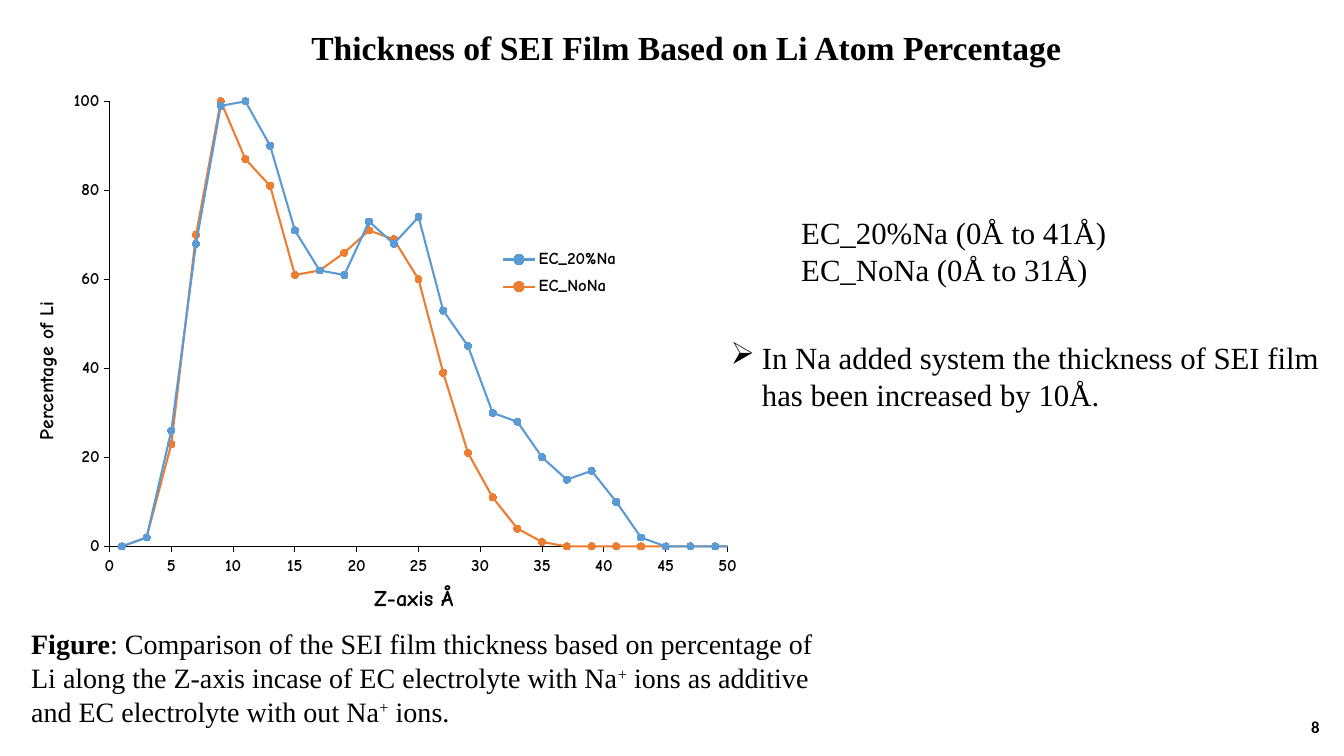
import dataclasses

import lxml.etree
import pptx
import pptx.chart.data
import pptx.dml.color
import pptx.enum.chart
import pptx.enum.text
import pptx.oxml.ns
import pptx.util

ALIGN = pptx.enum.text.PP_ALIGN
ANCHOR = pptx.enum.text.MSO_ANCHOR
AUTOSIZE = pptx.enum.text.MSO_AUTO_SIZE
CHART = pptx.enum.chart


def rgb(code):
    return pptx.dml.color.RGBColor.from_string(code)


def apply(target, values):
    for name, value in values.items():
        setattr(target, name, value)


def set_layout(parent, index, x, y, w, h, inner=False):
    """Give a chart part a manual layout, in shares of the chart."""
    qn = pptx.oxml.ns.qn
    for old in parent.findall(qn("c:layout")):
        parent.remove(old)
    layout = lxml.etree.Element(qn("c:layout"))
    parent.insert(index, layout)
    manual = lxml.etree.SubElement(layout, qn("c:manualLayout"))
    entries = {"layoutTarget": "inner"} if inner else {}
    entries.update(xMode="edge", yMode="edge", x=x, y=y, w=w, h=h)
    for tag, value in entries.items():
        lxml.etree.SubElement(manual, qn(f"c:{tag}")).set("val", str(value))


@dataclasses.dataclass(frozen=True)
class Theme:
    ink: str = "000000"
    sodium: str = "5B9BD5"
    plain: str = "ED7D31"
    serif: str = "Times New Roman"
    hand: str = "Comic Neue"
    sans: str = "Calibri"
    title: int = 24
    body: int = 22
    caption: int = 20
    axis_title: int = 16
    side_title: int = 14
    label: int = 12
    chart: int = 10


class SlideWriter:
    """Places elements in percent of the slide's width and height."""

    def __init__(self, deck, theme):
        self.deck = deck
        self.theme = theme
        self.page = deck.slides.add_slide(deck.slide_layouts[6])

    def place(self, left, top, width, height):
        across, down = self.deck.slide_width, self.deck.slide_height
        return [round(share * side / 100) for share, side in
                ((left, across), (top, down), (width, across), (height, down))]

    def style(self, font, size, name, bold=False):
        apply(font, {"size": pptx.util.Pt(size), "name": name, "bold": bold})
        font.color.rgb = rgb(self.theme.ink)

    def text(self, at, paragraphs, size, name, bold=False, align=ALIGN.LEFT,
             wrap=True, rotation=0, anchor=ANCHOR.TOP, autosize=AUTOSIZE.SHAPE_TO_FIT_TEXT):
        """Each paragraph is a string or a list of (text, format) spans."""
        box = self.page.shapes.add_textbox(*self.place(*at))
        box.rotation = rotation
        frame = box.text_frame
        apply(frame, {"word_wrap": wrap, "auto_size": autosize, "vertical_anchor": anchor})
        for number, spans in enumerate(paragraphs):
            para = frame.add_paragraph() if number else frame.paragraphs[0]
            para.alignment = align
            for words, extra in [(spans, {})] if isinstance(spans, str) else spans:
                span = para.add_run()
                span.text = words
                self.style(span.font, size, name, extra.get("bold", bold))
                if extra.get("raised"):
                    span.font._element.set("baseline", "30000")
        return box

    def bullet(self, box, mark, indent):
        for para in box.text_frame.paragraphs:
            properties = para._p.get_or_add_pPr()
            hang = pptx.util.Inches(indent)
            properties.set("marL", str(hang))
            properties.set("indent", str(-hang))
            tag = pptx.oxml.ns.qn("a:buChar")
            lxml.etree.SubElement(properties, tag).set("char", mark)

    def axis(self, axis, top, step):
        apply(axis, {
            "minimum_scale": 0, "maximum_scale": top, "major_unit": step,
            "has_major_gridlines": False, "has_minor_gridlines": False, "has_title": False,
            "major_tick_mark": CHART.XL_TICK_MARK.OUTSIDE,
            "minor_tick_mark": CHART.XL_TICK_MARK.NONE,
        })
        self.style(axis.tick_labels.font, self.theme.label, self.theme.hand, True)
        axis.format.line.color.rgb = rgb(self.theme.ink)
        axis.format.line.width = pptx.util.Pt(0.75)

    def scatter(self, at, depths, curves, plot_area, legend_area):
        """Curves maps a series name to its colour and values."""
        data = pptx.chart.data.XyChartData()
        for name, (_, values) in curves.items():
            series = data.add_series(name)
            for depth, value in zip(depths, values):
                series.add_data_point(depth, value)
        chart = self.page.shapes.add_chart(
            CHART.XL_CHART_TYPE.XY_SCATTER_LINES, *self.place(*at), data).chart
        apply(chart, {"has_title": False, "has_legend": True})
        self.style(chart.font, self.theme.chart, self.theme.sans)
        self.axis(chart.category_axis, 50, 5)
        self.axis(chart.value_axis, 100, 20)

        plot = chart.plots[0]
        plot.vary_by_categories = False
        for series, (color, _) in zip(plot.series, curves.values()):
            series.smooth = False
            apply(series.marker, {"style": CHART.XL_MARKER_STYLE.CIRCLE, "size": 5})
            series.marker.format.fill.solid()
            series.marker.format.fill.fore_color.rgb = rgb(color)
            for line in (series.format.line, series.marker.format.line):
                line.color.rgb = rgb(color)
            series.format.line.width = pptx.util.Pt(1.5)

        legend = chart.legend
        apply(legend, {"position": CHART.XL_LEGEND_POSITION.RIGHT, "include_in_layout": False})
        self.style(legend.font, self.theme.label, self.theme.hand, True)
        space = chart._chartSpace
        set_layout(space.find(".//" + pptx.oxml.ns.qn("c:plotArea")), 0, *plot_area, inner=True)
        set_layout(space.find(".//" + pptx.oxml.ns.qn("c:legend")), 1, *legend_area)


def main():
    deck = pptx.Presentation()
    apply(deck, {"slide_width": pptx.util.Inches(13.33), "slide_height": pptx.util.Inches(7.5)})
    theme = Theme()
    slide = SlideWriter(deck, theme)
    raised = {"raised": True}

    slide.text((1.58, 82.27, 61.8, 14.8), [[
        ("Figure", {"bold": True}),
        (": Comparison of the SEI film thickness based on percentage of Li along the "
         "Z-axis incase of EC electrolyte with Na", {}),
        ("+", raised),
        (" ions as additive and EC electrolyte with out Na", {}),
        ("+", raised),
        (" ions.", {}),
    ]], theme.caption, theme.serif)
    slide.text((26.33, 76.67, 8.93, 4.93), ["Z-axis Å"], theme.axis_title, theme.hand,
               bold=True, align=ALIGN.CENTER, wrap=False)
    slide.text((22.43, 2.93, 57.83, 6.67), ["Thickness of SEI Film Based on Li Atom Percentage"],
               theme.title, theme.serif, bold=True, wrap=False)
    slide.text((-4.2, 46.8, 15.23, 4.53), ["Percentage of Li"], theme.side_title, theme.hand,
               bold=True, align=ALIGN.CENTER, rotation=270)

    curves = {
        "EC_20%Na": (theme.sodium, [
            0, 2, 26, 68, 99, 100, 90, 71, 62, 61, 73, 68, 74,
            53, 45, 30, 28, 20, 15, 17, 10, 2, 0, 0, 0, 0]),
        "EC_NoNa": (theme.plain, [
            0, 2, 23, 70, 100, 87, 81, 61, 62, 66, 71, 69, 60,
            39, 21, 11, 4, 1, 0, 0, 0, 0, 0, 0, 0, 0]),
    }
    slide.scatter((4.65, 12.13, 50.18, 64), range(1, 52, 2), curves,
                  plot_area=(0.07, 0.02, 0.92, 0.92), legend_area=(0.64, 0.31, 0.2, 0.13))

    slide.text((58.88, 27.6, 24.45, 11.2), ["EC_20%Na (0Å to 41Å)", "EC_NoNa (0Å to 31Å)"],
               theme.body, theme.serif, wrap=False)
    finding = slide.text(
        (53.63, 44.13, 45.3, 11.2),
        ["In Na added system the thickness of SEI film has been increased by 10Å."],
        theme.body, theme.serif)
    slide.bullet(finding, "➢", 0.31)
    slide.text((76.43, 93.47, 22.5, 5.33), ["8"], theme.label, theme.sans, bold=True,
               align=ALIGN.RIGHT, anchor=ANCHOR.MIDDLE, autosize=AUTOSIZE.NONE)
    deck.save("out.pptx")


if __name__ == "__main__":
    main()
